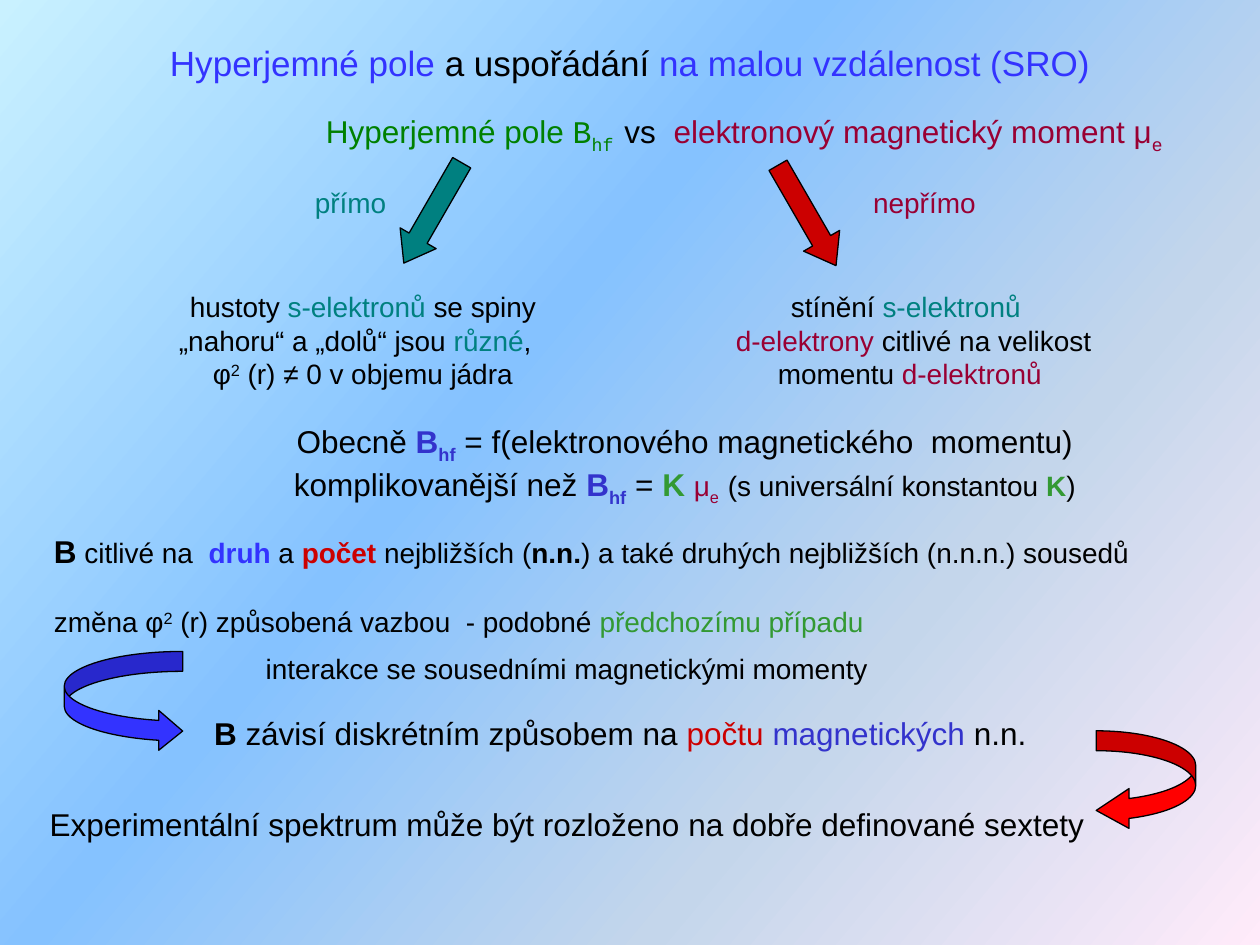
from dataclasses import dataclass

import pptx
import pptx.dml.color
import pptx.enum.shapes
import pptx.enum.text
import pptx.oxml
import pptx.oxml.ns
import pptx.util

SHAPE = pptx.enum.shapes.MSO_SHAPE
ALIGN = pptx.enum.text.PP_ALIGN
SUB, SUPER = -25000, 30000


@dataclass(frozen=True)
class Theme:
    font: str = "Arial"
    mono: str = "Courier New"
    title: int = 20
    lead: int = 18
    body: int = 16
    black: str = "000000"
    blue: str = "3333FF"
    indigo: str = "3333CC"
    green: str = "008000"
    leaf: str = "339933"
    teal: str = "008080"
    wine: str = "990033"
    red: str = "CC0000"
    bright_red: str = "FF0000"
    background: tuple = ((0, "C9F1FF"), (40, "85C2FF"), (70, "C4D6EB"), (100, "FFEBFA"))
    background_angle: int = 40


@dataclass
class Run:
    text: str
    color: str = Theme.black
    bold: bool = False
    base: int = 0
    size: int = 0
    font: str = ""


def rgb(value):
    return pptx.dml.color.RGBColor.from_string(value)


class Builder:
    """Places elements on a grid of 100 columns by 75 rows."""

    COLS, ROWS = 100, 75

    def __init__(self, prs, theme):
        self.prs, self.theme = prs, theme
        self.slide = prs.slides.add_slide(prs.slide_layouts[5])

    def box(self, left, top, width, height):
        col, row = self.prs.slide_width / self.COLS, self.prs.slide_height / self.ROWS
        return [round(n) for n in (left * col, top * row, width * col, height * row)]

    def background(self):
        t = self.theme
        fill = self.slide.background.fill
        fill.gradient()
        fill.gradient_angle = 360 - t.background_angle
        stops = self.slide.element.find(".//" + pptx.oxml.ns.qn("a:gsLst"))
        for old in list(stops):
            stops.remove(old)
        for share, color in t.background:
            stops.append(pptx.oxml.parse_xml(
                f'<a:gs {pptx.oxml.ns.nsdecls("a")} pos="{share * 1000}">'
                f'<a:srgbClr val="{color}"/></a:gs>'))

    def fill_text(self, sp, paragraphs, size, align, wrap=True):
        tf = sp.text_frame
        tf.word_wrap = wrap
        tf.auto_size = pptx.enum.text.MSO_AUTO_SIZE.NONE
        tf.vertical_anchor = pptx.enum.text.MSO_ANCHOR.TOP
        for i, runs in enumerate(paragraphs):
            p = tf.add_paragraph() if i else tf.paragraphs[0]
            p.alignment = align
            p.font.name, p.font.size = self.theme.font, pptx.util.Pt(size)
            for run in runs:
                self.add_run(p, run)

    def add_run(self, p, run):
        for i, line in enumerate(run.text.split("\n")):
            if i:
                p.add_line_break()
            r = p.add_run()
            r.text = line
            r.font.color.rgb = rgb(run.color)
            if run.bold:
                r.font.bold = True
            if run.size:
                r.font.size = pptx.util.Pt(run.size)
            if run.font:
                r.font.name = run.font
            if run.base:
                r.font._element.set("baseline", str(run.base))

    def title(self, place, *runs):
        sp = self.slide.shapes.title
        sp.left, sp.top, sp.width, sp.height = self.box(*place)
        self.fill_text(sp, [runs], self.theme.title, ALIGN.CENTER)

    def text(self, place, *paragraphs, size=Theme.body, align=ALIGN.LEFT, wrap=True):
        sp = self.slide.shapes.add_textbox(*self.box(*place))
        self.fill_text(sp, paragraphs, size, align, wrap)

    def arrow(self, kind, place, color, adjustments, rotation=0):
        sp = self.slide.shapes.add_shape(kind, *self.box(*place))
        for i, value in enumerate(adjustments):
            sp.adjustments[i] = value
        sp.rotation = rotation
        sp.shadow.inherit = False
        sp.fill.solid()
        sp.fill.fore_color.rgb = rgb(color)
        sp.line.color.rgb = rgb(self.theme.black)
        sp.line.width = pptx.util.Pt(0.75)


def main():
    t = Theme()
    prs = pptx.Presentation()
    prs.slide_width, prs.slide_height = pptx.util.Inches(10), pptx.util.Inches(7.5)
    b = Builder(prs, t)
    b.background()

    b.title((11.4, 2.8, 77.2, 4.3),
            Run("Hyperjemné pole ", t.blue), Run("a uspořádání"),
            Run(" na malou vzdálenost (SRO)", t.blue))
    b.text((24.8, 8.4, 68.5, 4),
           [Run("Hyperjemné pole ", t.green), Run("B", t.green, font=t.mono),
            Run("hf ", t.green, base=SUB, font=t.mono), Run("vs  "),
            Run("elektronový magnetický moment μ", t.wine), Run("e", t.wine, base=SUB)],
           size=t.lead, align=ALIGN.CENTER)

    straight = (0.5, 0.69)
    b.arrow(SHAPE.DOWN_ARROW, (32.7, 12.3, 3.3, 9.2), t.teal, straight, 30)
    b.arrow(SHAPE.DOWN_ARROW, (62.4, 12.5, 3.3, 9.2), t.red, straight, 330)
    b.text((24, 14.2, 7.7, 3.7), [Run("přímo", t.teal)], wrap=False)
    b.text((67.7, 14.2, 10.8, 3.7), [Run(" nepřímo", t.wine)], wrap=False)

    b.text((11.7, 22.5, 34.2, 9),
           [Run("hustoty "), Run("s-elektronů ", t.teal),
            Run("se spiny „nahoru“ a „dolů“ jsou "), Run("různé", t.teal),
            Run(",  \nφ"), Run("2", base=SUPER), Run(" (r) ≠ 0 v objemu jádra")],
           align=ALIGN.CENTER)
    b.text((53.1, 22.5, 38.2, 9),
           [Run("stínění "), Run("s-elektronů ", t.teal)],
           [Run(" "), Run("d-elektrony ", t.wine),
            Run("citlivé na velikost momentu "), Run("d-elektronů", t.wine)],
           align=ALIGN.CENTER)

    field = [Run("B", t.indigo, bold=True), Run("hf", t.indigo, bold=True, base=SUB)]
    b.text((21.7, 33, 65.3, 7),
           [Run("Obecně "), *field,
            Run(" = f(elektronového magnetického  momentu) komplikovanější než "),
            *field, Run(" = "), Run("K ", t.leaf, bold=True),
            Run("μ", t.wine, size=t.body), Run("e  ", t.wine, base=SUB, size=t.body),
            Run("(s universální konstantou ", size=t.body),
            Run("K", t.leaf, bold=True, size=t.body), Run(")", size=t.body)],
           size=t.lead, align=ALIGN.CENTER)

    b.text((3.3, 41.7, 95, 4),
           [Run("B", bold=True, size=t.lead), Run(" citlivé na  "),
            Run("druh", t.blue, bold=True), Run(" a "), Run("počet ", t.red, bold=True),
            Run("nejbližších ("), Run("n.n.", bold=True),
            Run(") a také druhých nejbližších (n.n.n.) sousedů")])
    b.text((3.3, 47.5, 66.6, 3.7),
           [Run("změna φ"), Run("2", base=SUPER),
            Run(" (r) způsobená vazbou  - podobné "),
            Run("předchozímu případu", t.leaf)], wrap=False)
    b.text((20.1, 51.2, 49.9, 3.7),
           [Run("interakce se sousedními magnetickými momenty")], wrap=False)
    b.arrow(SHAPE.CURVED_RIGHT_ARROW, (5.1, 51.7, 9.4, 7.9), t.blue, (0.2, 0.4, 0.24))
    b.text((16, 56.2, 69.2, 4),
           [Run("B ", bold=True), Run("závisí diskrétním způsobem na "),
            Run("počtu ", t.red), Run("magnetických", t.indigo), Run(" n.n.")],
           size=t.lead)
    b.text((2.7, 63.4, 84.6, 4),
           [Run("Experimentální spektrum může být rozloženo na dobře definované sextety")],
           size=t.lead, align=ALIGN.CENTER)
    b.arrow(SHAPE.CURVED_LEFT_ARROW, (87, 58, 7.9, 7.9), t.bright_red, (0.2, 0.4, 0.33))

    prs.save("out.pptx")


if __name__ == "__main__":
    main()
